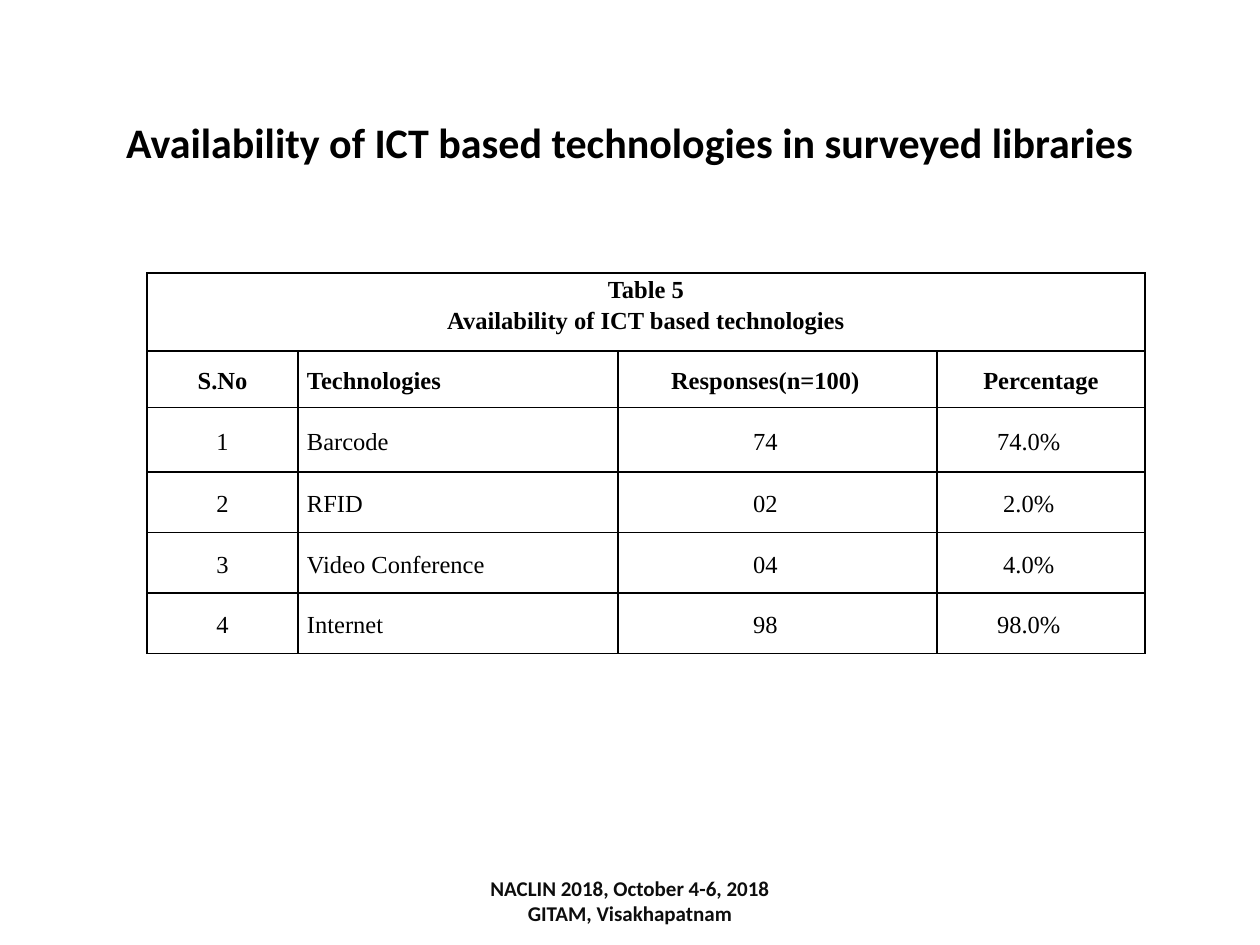
from dataclasses import dataclass

from lxml import etree
from pptx import Presentation
from pptx.dml.color import RGBColor
from pptx.enum.text import MSO_ANCHOR, PP_ALIGN
from pptx.oxml.ns import qn
from pptx.util import Pt

CENTER, LEFT = PP_ALIGN.CENTER, PP_ALIGN.LEFT
TOP, MIDDLE = MSO_ANCHOR.TOP, MSO_ANCHOR.MIDDLE


@dataclass(frozen=True)
class Theme:
    black: str = "000000"
    footer_color: str = "0D0D0D"
    heading_font: str = "Calibri"
    table_font: str = "Times New Roman"
    title_size: int = 24
    table_size: int = 14
    footer_size: int = 12
    border_width: int = 1
    cell_margin: int = 5
    shifted_margin: int = 19


THEME = Theme()

CAPTION = ["Table 5", "Availability of ICT based technologies"]
ROWS = [
    ["S.No", "Technologies", "Responses(n=100)", "Percentage"],
    ["1", "Barcode", "74", "74.0%"],
    ["2", "RFID", "02", "2.0%"],
    ["3", "Video Conference", "04", "4.0%"],
    ["4", "Internet", "98", "98.0%"],
]
COLUMN_WIDTHS = [86.4, 182.9, 182.2, 118.8]
ROW_HEIGHTS = [44.6, 32.4, 36.7, 34.6, 34.6, 34.6]


def write_lines(frame, lines, font, size, color, bold, alignment=CENTER, spacing=1.0):
    frame.text = "\n".join(lines)
    for paragraph in frame.paragraphs:
        paragraph.alignment = alignment
        paragraph.line_spacing = spacing
        paragraph.font.name = font
        paragraph.font.size = Pt(size)
        paragraph.font.bold = bold
        paragraph.font.color.rgb = RGBColor.from_string(color)


def add_heading(slide, box, lines, size, color):
    frame = slide.shapes.add_textbox(*map(Pt, box)).text_frame
    frame.word_wrap = True
    frame.vertical_anchor = MIDDLE
    write_lines(frame, lines, THEME.heading_font, size, color, True)


def set_borders(cell):
    properties = cell._tc.get_or_add_tcPr()
    for position, side in enumerate(("lnL", "lnR", "lnT", "lnB")):
        line = etree.Element(qn(f"a:{side}"), w=str(Pt(THEME.border_width)))
        fill = etree.SubElement(line, qn("a:solidFill"))
        etree.SubElement(fill, qn("a:srgbClr"), val=THEME.black)
        properties.insert(position, line)


def fill_cell(cell, lines, bold, alignment=CENTER, anchor=MIDDLE, right=THEME.cell_margin):
    cell.margin_left, cell.margin_right = Pt(THEME.cell_margin), Pt(right)
    cell.margin_top = cell.margin_bottom = Pt(0)
    cell.vertical_anchor = anchor
    write_lines(cell.text_frame, lines, THEME.table_font, THEME.table_size,
                THEME.black, bold, alignment, 1.15)


def add_technology_table(slide, box):
    table = slide.shapes.add_table(len(ROW_HEIGHTS), len(COLUMN_WIDTHS), *map(Pt, box)).table
    table.first_row = table.horz_banding = False
    for column, width in zip(table.columns, COLUMN_WIDTHS):
        column.width = Pt(width)
    for row, height in zip(table.rows, ROW_HEIGHTS):
        row.height = Pt(height)
    for cell in table.iter_cells():
        cell.fill.background()
        set_borders(cell)
    table.cell(0, 0).merge(table.cell(0, len(COLUMN_WIDTHS) - 1))
    fill_cell(table.cell(0, 0), CAPTION, True, anchor=TOP)
    for row_index, values in enumerate(ROWS, 1):
        is_header = row_index == 1
        for column_index, value in enumerate(values):
            is_shifted = column_index == 2 or (column_index == 3 and not is_header)
            fill_cell(table.cell(row_index, column_index), [value], is_header,
                      LEFT if column_index == 1 else CENTER,
                      right=THEME.shifted_margin if is_shifted else THEME.cell_margin)


def main():
    presentation = Presentation()
    presentation.slide_width, presentation.slide_height = Pt(720), Pt(540)
    slide = presentation.slides.add_slide(presentation.slide_layouts[6])
    add_heading(slide, (36, 36, 648, 90),
                ["Availability of ICT based technologies in surveyed libraries"],
                THEME.title_size, THEME.black)
    add_technology_table(slide, (84, 156, sum(COLUMN_WIDTHS), sum(ROW_HEIGHTS)))
    add_heading(slide, (246, 500.4, 228, 28.8),
                ["NACLIN 2018, October 4-6, 2018", "GITAM, Visakhapatnam"],
                THEME.footer_size, THEME.footer_color)
    presentation.save("out.pptx")


if __name__ == "__main__":
    main()
